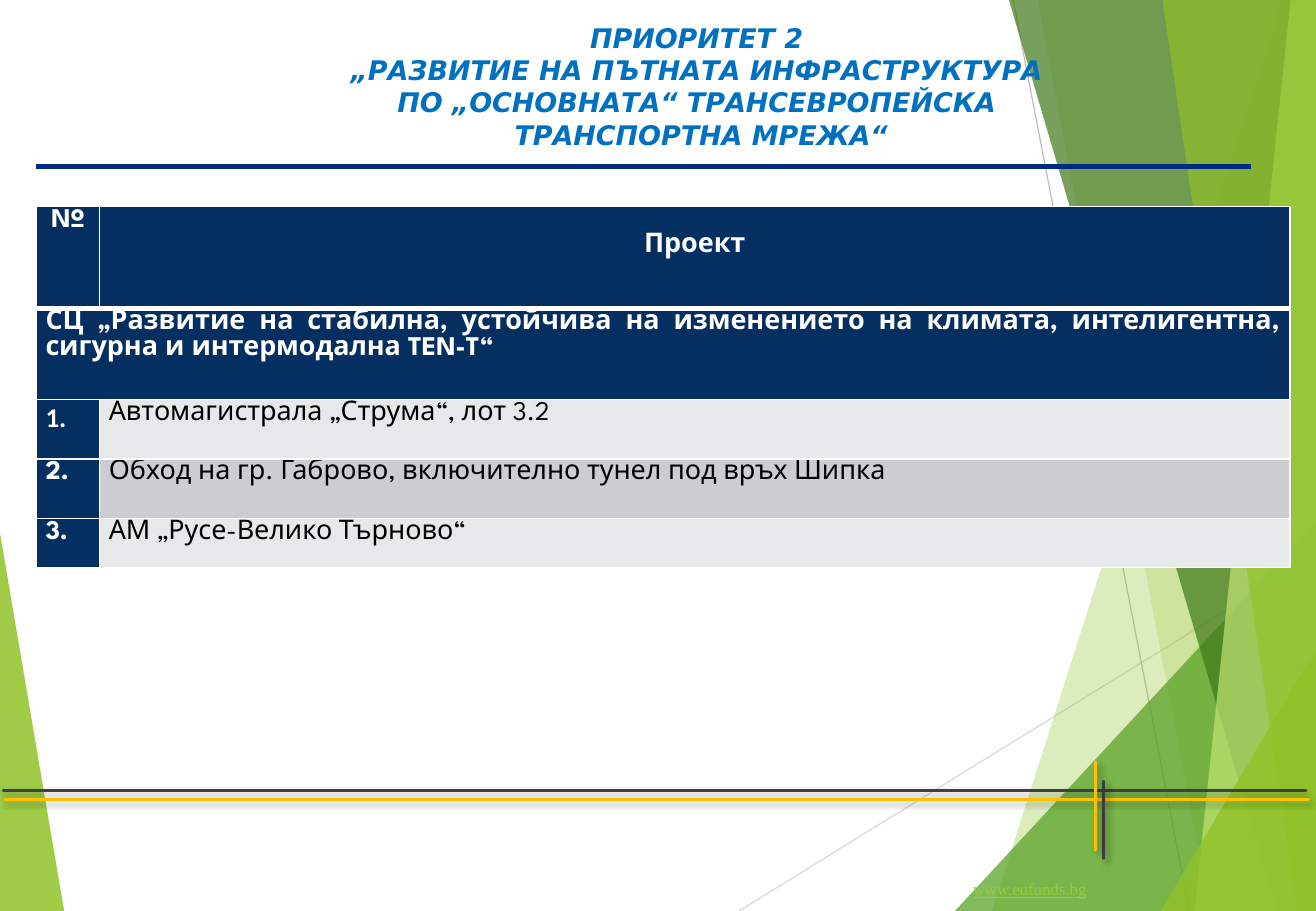
from dataclasses import dataclass
from typing import Optional

import pptx
import pptx.dml.color
import pptx.enum.shapes
import pptx.enum.text
import pptx.oxml
import pptx.oxml.ns
import pptx.util
from lxml import etree

Pt = pptx.util.Pt
Align = pptx.enum.text.PP_ALIGN
WIDTH, HEIGHT = 780, 540
NAVY, WHITE, BLACK = "052F61", "FFFFFF", "000000"
GREEN, GOLD, CHARCOAL = "90C226", "FFC000", "404040"
TABLE_FONT = "League Spartan"


@dataclass
class Facet:
    points: list[tuple[float, float]]
    color: str
    opacity: int


@dataclass
class Shadow:
    opacity: int
    blur: float
    distance: float
    angle: int


@dataclass
class Rule:
    start: tuple[float, float]
    end: tuple[float, float]
    color: str
    weight: float
    shadow: Optional[Shadow] = None


@dataclass
class CellStyle:
    fill: str
    color: str = WHITE
    bold: bool = True
    align: Align = Align.JUSTIFY
    font: str = TABLE_FONT
    margin_top: float = 0


def band(top_x: float, bottom_x: float, color: str, opacity: int) -> Facet:
    """Full-height facet from a slanted edge to the right side of the slide."""
    return Facet([(top_x, 0), (bottom_x, HEIGHT), (WIDTH, HEIGHT), (WIDTH, 0)], color, opacity)


def corner(left: float, top: float, color: str, opacity: int) -> Facet:
    """Triangle in the bottom right corner of the slide."""
    return Facet([(left, HEIGHT), (WIDTH, top), (WIDTH, HEIGHT)], color, opacity)


BACK_RULES = [
    Rule((438, 540), (780, 329), "D9D9D9", 0.75),
    Rule((600.5, 0), (705, 540), "BFBFBF", 0.75),
]
FACETS = [
    Facet([(0, 316), (38, HEIGHT), (0, HEIGHT)], GREEN, 85),
    band(760, 588, GREEN, 30),
    band(615, 717, GREEN, 20),
    corner(566, 309, "54A021", 72),
    band(598, 757, "3F7819", 70),
    band(765, 708, "C0E474", 70),
    band(689, 769, GREEN, 65),
    corner(688, 385, GREEN, 80),
]
FLAT_SHADOW = Shadow(35, 3, 2, 90)
CROSS_SHADOW = Shadow(40, 4, 3, 45)
FRONT_RULES = [
    Rule((2, 468.5), (774, 468.5), CHARCOAL, 2, FLAT_SHADOW),
    Rule((3, 474), (775.5, 474), GOLD, 2, FLAT_SHADOW),
    Rule((654.2, 463), (654.2, 509), CHARCOAL, 1.5, CROSS_SHADOW),
    Rule((649.5, 451.5), (649.5, 504), GOLD, 1.5, CROSS_SHADOW),
    Rule((21.6, 98.6), (741.6, 98.6), "002B82", 3),
]
TITLE_LINES = [
    "ПРИОРИТЕТ 2 ",
    "„РАЗВИТИЕ НА ПЪТНАТА ИНФРАСТРУКТУРА ",
    "ПО „ОСНОВНАТА“ ТРАНСЕВРОПЕЙСКА ",
    "ТРАНСПОРТНА МРЕЖА“",
]
OBJECTIVE = ("СЦ „Развитие на стабилна, устойчива на изменението на климата, "
             "интелигентна, сигурна и интермодална TEN-T“")
PROJECTS = [
    "Автомагистрала „Струма“, лот 3.2",
    "Обход на гр. Габрово, включително тунел под връх Шипка",
    "АМ „Русе-Велико Търново“",
]
COLUMN_WIDTHS = [37.5, 705.5]
ROW_HEIGHTS = [60.5, 54, 35.3, 35.3, 29]


def rgb(color: str) -> pptx.dml.color.RGBColor:
    return pptx.dml.color.RGBColor.from_string(color)


def add_child(parent, tag: str, **attributes):
    child = etree.SubElement(parent, pptx.oxml.ns.qn(tag))
    for name, value in attributes.items():
        child.set(name, str(value))
    return child


def draw_facet(slide, facet: Facet) -> None:
    builder = slide.shapes.build_freeform(*facet.points[0], scale=Pt(1))
    builder.add_line_segments(facet.points[1:], close=True)
    shape = builder.convert_to_shape()
    shape.shadow.inherit = False
    shape.line.fill.background()
    shape.fill.solid()
    shape.fill.fore_color.rgb = rgb(facet.color)
    color = shape.element.spPr.find(".//" + pptx.oxml.ns.qn("a:srgbClr"))
    add_child(color, "a:alpha", val=facet.opacity * 1000)


def draw_rule(slide, rule: Rule) -> None:
    line = slide.shapes.add_connector(
        pptx.enum.shapes.MSO_CONNECTOR.STRAIGHT, *map(Pt, rule.start + rule.end))
    line.line.color.rgb = rgb(rule.color)
    line.line.width = Pt(rule.weight)
    effects = add_child(line.element.spPr, "a:effectLst")
    if rule.shadow:
        line.line._get_or_add_ln().set("cap", "rnd")
        outer = add_child(effects, "a:outerShdw", blurRad=Pt(rule.shadow.blur),
                          dist=Pt(rule.shadow.distance), dir=rule.shadow.angle * 60000,
                          rotWithShape=0)
        color = add_child(outer, "a:srgbClr", val=BLACK)
        add_child(color, "a:alpha", val=rule.shadow.opacity * 1000)


def style_font(font, name: str, size: float, color: str, bold: bool = False) -> None:
    font.name, font.size, font.bold = name, Pt(size), bold
    font.color.rgb = rgb(color)


def format_title(title) -> None:
    title.left, title.top, title.width, title.height = map(Pt, (163.4, 20.9, 504.7, 72))
    frame = title.text_frame
    frame.text = "\n".join(TITLE_LINES)
    frame.word_wrap = True
    frame.auto_size = pptx.enum.text.MSO_AUTO_SIZE.NONE
    frame.vertical_anchor = pptx.enum.text.MSO_ANCHOR.BOTTOM
    for paragraph in frame.paragraphs:
        paragraph.alignment = Align.CENTER
        style_font(paragraph.font, "DejaVu Sans", 16, "0070C0", bold=True)
        paragraph.font.italic = True
    title.element.getparent().append(title.element)  # bring in front of the facets


def add_web_address(slide) -> None:
    box = slide.shapes.add_textbox(*map(Pt, (569.5, 517, 83.5, 19.4)))
    box.text_frame.word_wrap = False
    paragraph = box.text_frame.paragraphs[0]
    paragraph.text = "www.eufunds.bg"
    style_font(paragraph.font, "Times New Roman", 10, "99CA3C")
    paragraph.font.underline = True


def set_borders(cell, top: float, bottom: float) -> None:
    properties = cell._tc.get_or_add_tcPr()
    for side, weight in (("L", 1), ("R", 1), ("T", top), ("B", bottom)):
        line = add_child(properties, f"a:ln{side}", w=Pt(weight))
        add_child(add_child(line, "a:solidFill"), "a:srgbClr", val=WHITE)


def fill_cell(cell, text: str, style: CellStyle) -> None:
    cell.fill.solid()
    cell.fill.fore_color.rgb = rgb(style.fill)
    cell.margin_left = cell.margin_right = Pt(5.4)
    cell.margin_top, cell.margin_bottom = Pt(style.margin_top), Pt(0)
    paragraph = cell.text_frame.paragraphs[0]
    paragraph.text = text
    paragraph.alignment = style.align
    paragraph.line_spacing = 1.07
    style_font(paragraph.font, style.font, 16, style.color, style.bold)


def add_project_table(slide) -> None:
    table = slide.shapes.add_table(
        len(ROW_HEIGHTS), len(COLUMN_WIDTHS), Pt(21.6), Pt(122.4),
        Pt(sum(COLUMN_WIDTHS)), Pt(sum(ROW_HEIGHTS))).table
    table.first_row = table.horz_banding = False
    for column, width in zip(table.columns, COLUMN_WIDTHS):
        column.width = Pt(width)
    for index, height in enumerate(ROW_HEIGHTS):
        table.rows[index].height = Pt(height)
        for cell in table.rows[index].cells:
            set_borders(cell, 3 if index == 1 else 1, 3 if index == 0 else 1)
    fill_cell(table.cell(0, 0), "№", CellStyle(NAVY, align=Align.CENTER))
    fill_cell(table.cell(0, 1), "Проект", CellStyle(NAVY, align=Align.CENTER, margin_top=15))
    table.cell(1, 0).merge(table.cell(1, 1))
    fill_cell(table.cell(1, 0), OBJECTIVE, CellStyle(NAVY))
    for number, project in enumerate(PROJECTS, 1):
        number_font = "Calibri" if number == 1 else TABLE_FONT
        shade = "E7E8EA" if number % 2 else "CCCDD2"
        fill_cell(table.cell(number + 1, 0), f"{number}.", CellStyle(NAVY, font=number_font))
        fill_cell(table.cell(number + 1, 1), project, CellStyle(shade, BLACK, bold=False))


def main() -> None:
    presentation = pptx.Presentation()
    presentation.slide_width, presentation.slide_height = Pt(WIDTH), Pt(HEIGHT)
    slide = presentation.slides.add_slide(presentation.slide_layouts.get_by_name("Title Only"))
    draw_facet(slide, FACETS[0])
    for rule in BACK_RULES:
        draw_rule(slide, rule)
    for facet in FACETS[1:]:
        draw_facet(slide, facet)
    for rule in FRONT_RULES:
        draw_rule(slide, rule)
    add_web_address(slide)
    format_title(slide.shapes.title)
    add_project_table(slide)
    presentation.save("out.pptx")


if __name__ == "__main__":
    main()
